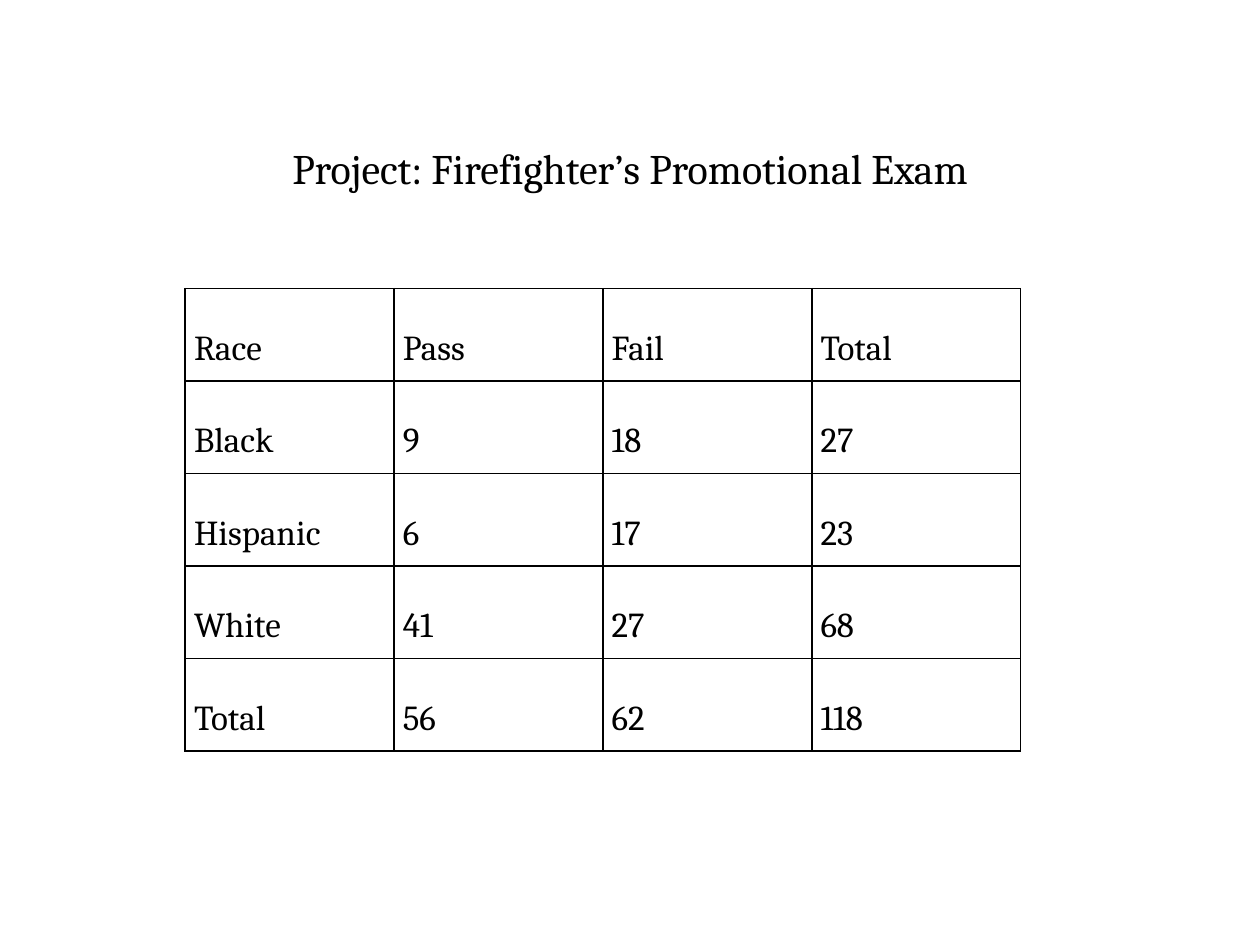
from lxml import etree
from pptx import Presentation
from pptx.dml.color import RGBColor
from pptx.enum.text import MSO_ANCHOR, PP_ALIGN
from pptx.oxml.ns import qn
from pptx.util import Inches, Pt

BLACK = RGBColor(0x00, 0x00, 0x00)
BOTTOM = MSO_ANCHOR.BOTTOM
TOP = MSO_ANCHOR.TOP
CENTER = PP_ALIGN.CENTER
TITLE_ONLY = 5
FONT = "Cambria"
BORDERS = ("a:lnL", "a:lnR", "a:lnT", "a:lnB")
RESULTS = [
    ("Race", "Pass", "Fail", "Total"),
    ("Black", "9", "18", "27"),
    ("Hispanic", "6", "17", "23"),
    ("White", "41", "27", "68"),
    ("Total", "56", "62", "118"),
]


def apply_format(target, values):
    for name, value in values.items():
        setattr(target, name, value)


def add_text(para, text, size):
    span = para.add_run()
    span.text = text
    apply_format(span.font, {"name": FONT, "size": Pt(size), "bold": False})
    span.font.color.rgb = BLACK


deck = Presentation()
apply_format(deck, {"slide_width": Inches(10), "slide_height": Inches(7.5)})
page = deck.slides.add_slide(deck.slide_layouts[TITLE_ONLY])

title = page.shapes.title
apply_format(title, {"left": Inches(0.6), "top": Inches(0.12),
                     "width": Inches(8.8), "height": Inches(1.46)})
apply_format(title.text_frame, {"vertical_anchor": BOTTOM, "word_wrap": True})
title_para = title.text_frame.paragraphs[0]
title_para.alignment = CENTER
add_text(title_para, "Project: Firefighter’s Promotional Exam", 24)

frame = page.shapes.add_table(len(RESULTS), len(RESULTS[0]), Inches(1.47),
                              Inches(2.29), Inches(6.63), Inches(3.67))
table = frame.table
apply_format(table, {"first_row": False, "horz_banding": False})

for row, values in enumerate(RESULTS):
    for column, value in enumerate(values):
        cell = table.cell(row, column)
        apply_format(cell, {"margin_left": Inches(0.07), "margin_right": Inches(0.07),
                            "margin_top": 0, "margin_bottom": 0,
                            "vertical_anchor": TOP})
        para = cell.text_frame.paragraphs[0]
        para.line_spacing = 2.0
        add_text(para, value, 20)
        properties = cell._tc.get_or_add_tcPr()
        for border in BORDERS:
            line = etree.SubElement(properties, qn(border), w=str(Pt(1)))
            fill = etree.SubElement(line, qn("a:solidFill"))
            etree.SubElement(fill, qn("a:srgbClr"), val=str(BLACK))
        cell.fill.background()

deck.save("out.pptx")
